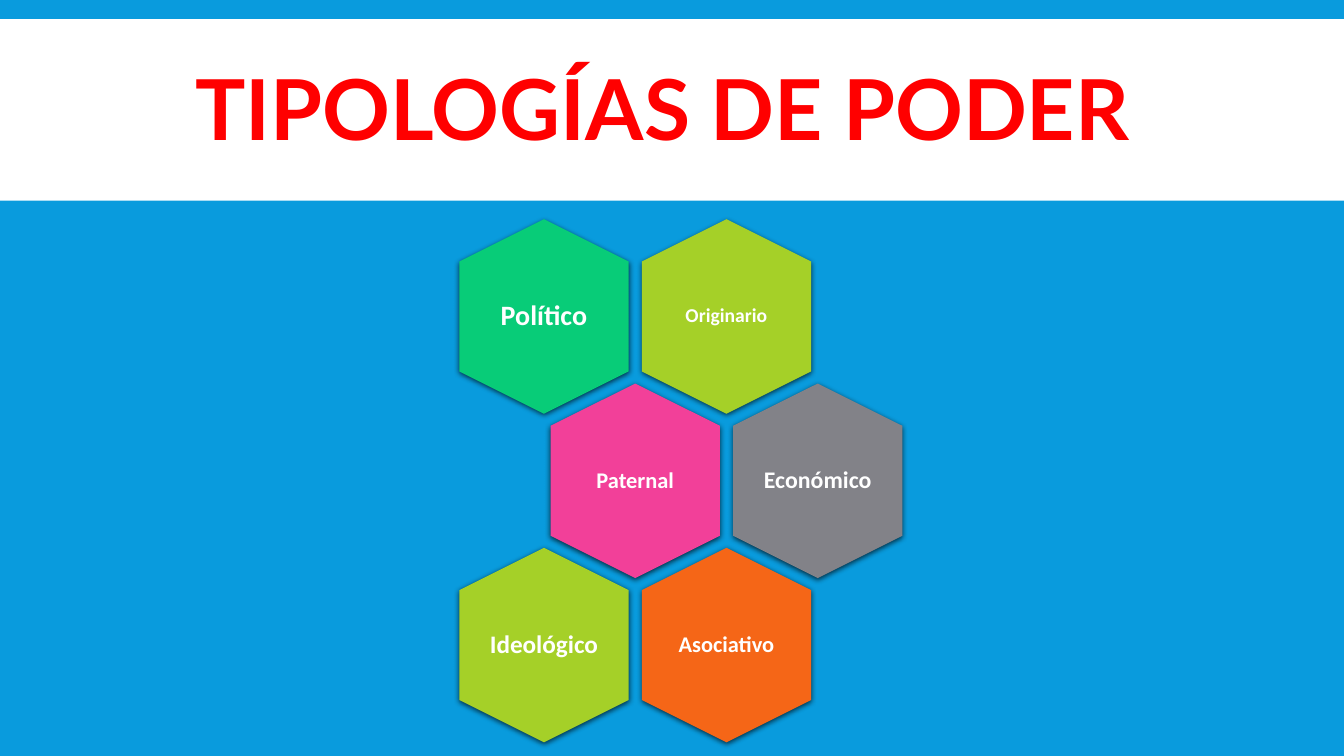
from dataclasses import dataclass

from lxml import etree
from pptx import Presentation
from pptx.dml.color import RGBColor
from pptx.enum.shapes import MSO_SHAPE
from pptx.enum.text import MSO_ANCHOR, PP_ALIGN
from pptx.oxml.ns import qn
from pptx.util import Inches, Pt

RECTANGLE = MSO_SHAPE.RECTANGLE
HEXAGON = MSO_SHAPE.HEXAGON
MIDDLE = MSO_ANCHOR.MIDDLE
CENTER = PP_ALIGN.CENTER


@dataclass(frozen=True)
class Theme:
    background: str = "099BDD"
    white: str = "FFFFFF"
    title: str = "FF0000"
    shadow: str = "000000"
    green: str = "08CC78"
    lime: str = "A5D028"
    pink: str = "F24099"
    gray: str = "828288"
    orange: str = "F56617"
    title_font: str = "Lato"
    label_font: str = "Calibri"
    title_size: int = 60
    small: int = 14
    medium: int = 16
    wide: int = 17
    large: int = 18
    largest: int = 20


THEME = Theme()


def add_text(box, wording, font, size, color, spacing):
    """Add one centred bold line of text in a box, without inner margins."""
    text_box = slide.shapes.add_textbox(*[Inches(length) for length in box])
    frame = text_box.text_frame
    frame.word_wrap = True
    frame.vertical_anchor = MIDDLE
    frame.margin_left = frame.margin_right = 0
    frame.margin_top = frame.margin_bottom = 0
    paragraph = frame.paragraphs[0]
    paragraph.alignment = CENTER
    paragraph.line_spacing = spacing
    run = paragraph.add_run()
    run.text = wording
    run.font.name = font
    run.font.size = Pt(size)
    run.font.bold = True
    run.font.color.rgb = RGBColor.from_string(color)


def add_solid(kind, box, color):
    """Add a filled shape with neither outline nor shadow."""
    shape = slide.shapes.add_shape(kind, *[Inches(length) for length in box])
    shape.fill.solid()
    shape.fill.fore_color.rgb = RGBColor.from_string(color)
    shape.line.fill.background()
    shape.shadow.inherit = False
    return shape


presentation = Presentation()
presentation.slide_width = Inches(13.33)
presentation.slide_height = Inches(7.5)
slide = presentation.slides.add_slide(presentation.slide_layouts[6])
slide.background.fill.solid()
slide.background.fill.fore_color.rgb = RGBColor.from_string(THEME.background)

# Title band
add_solid(RECTANGLE, (0, 0.19, 13.33, 1.8), THEME.white)
add_text((1.32, 0.31, 10.7, 1.65), "TIPOLOGÍAS DE PODER ",
         THEME.title_font, THEME.title_size, THEME.title, 0.85)

# Honeycomb: the middle row is shifted by half a column
HEX_WIDTH, HEX_HEIGHT = 1.93, 1.68
LABEL_WIDTH, LABEL_HEIGHT = 1.15, 1.33
FIRST_X, FIRST_Y = 5.395, 3.14
COLUMN_STEP, ROW_STEP = 1.81, 1.63

power_types = [
    [("Político", THEME.green, THEME.largest),
     ("Originario", THEME.lime, THEME.small)],
    [("Paternal", THEME.pink, THEME.medium),
     ("Económico", THEME.gray, THEME.wide)],
    [("Ideológico", THEME.lime, THEME.large),
     ("Asociativo", THEME.orange, THEME.medium)],
]

for row, pair in enumerate(power_types):
    for column, (power_type, color, size) in enumerate(pair):
        center_x = FIRST_X + (column + row % 2 / 2) * COLUMN_STEP
        center_y = FIRST_Y + row * ROW_STEP
        cell = add_solid(HEXAGON, (center_x - HEX_WIDTH / 2, center_y - HEX_HEIGHT / 2,
                                   HEX_WIDTH, HEX_HEIGHT), color)
        cell.rotation = 90
        cell.adjustments[0] = 0.25

        effects = cell._element.spPr.find(qn("a:effectLst"))
        shadow = etree.SubElement(effects, qn("a:outerShdw"), blurRad=str(Pt(4)),
                                  dist=str(Pt(1.2)), dir="5400000", rotWithShape="0")
        shadow_color = etree.SubElement(shadow, qn("a:srgbClr"), val=THEME.shadow)
        etree.SubElement(shadow_color, qn("a:alpha"), val="68000")

        add_text((center_x - LABEL_WIDTH / 2, center_y - LABEL_HEIGHT / 2,
                  LABEL_WIDTH, LABEL_HEIGHT), power_type,
                 THEME.label_font, size, THEME.white, 0.9)

presentation.save("out.pptx")
